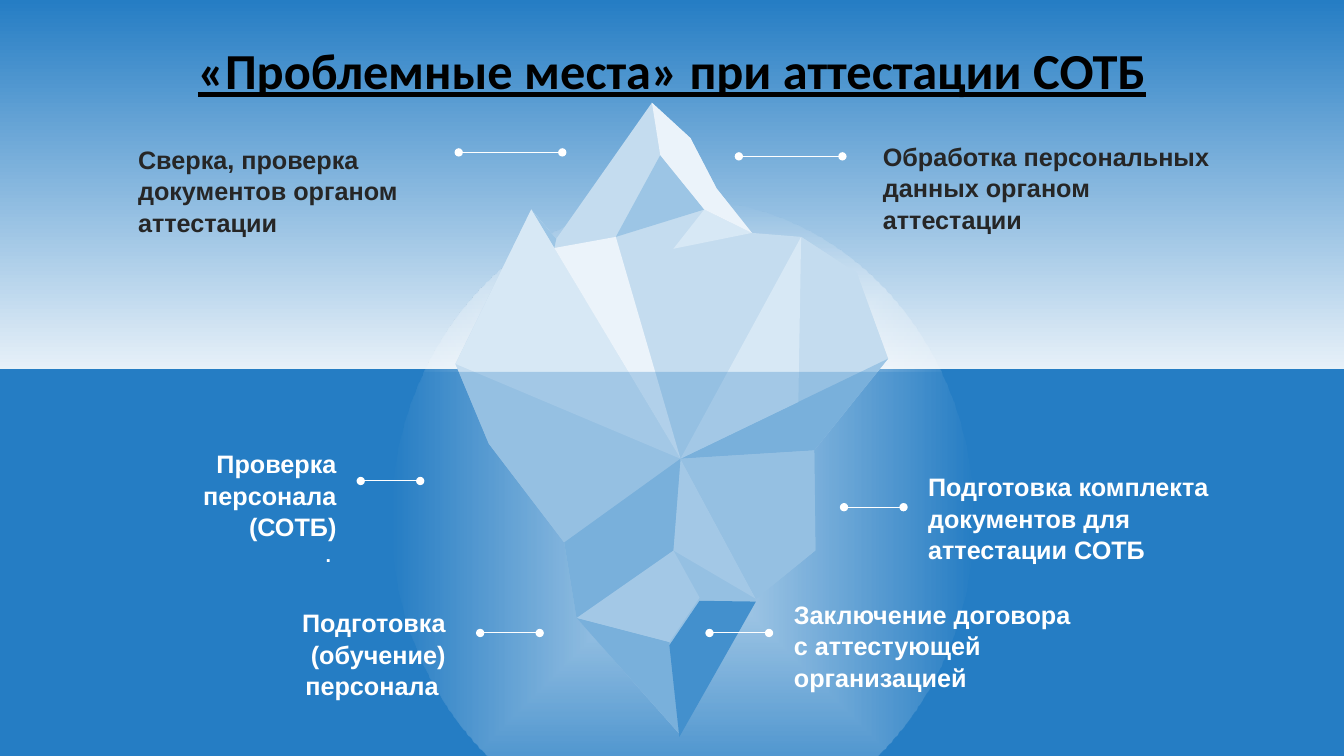
from pptx import Presentation
from pptx.dml.color import RGBColor
from pptx.enum.shapes import MSO_CONNECTOR, MSO_SHAPE
from pptx.enum.text import MSO_ANCHOR, MSO_AUTO_SIZE, PP_ALIGN
from pptx.oxml import parse_xml
from pptx.oxml.ns import nsdecls, qn
from pptx.util import Cm, Pt

BLUE, WHITE, DARK = "257DC4", "FFFFFF", "262626"
PALE, MIST, SKY, SNOW, DEEP = "C4DCEF", "D7E8F5", "9CC5E5", "EBF3FA", "5098D1"
LEFT, RIGHT = PP_ALIGN.LEFT, PP_ALIGN.RIGHT


def paint(fill, tone):
    fill.solid()
    fill.fore_color.rgb = RGBColor.from_string(tone)


def write(frame, text, size=18, tone=WHITE, font="Arial", align=LEFT, line=False, space=1.04):
    par = frame.add_paragraph() if frame.text else frame.paragraphs[0]
    par.alignment = align
    par.line_spacing = space
    run = par.add_run()
    run.text = text
    run.font.name = font
    run.font.size = Pt(size)
    run.font.bold = True
    run.font.underline = line
    paint(run.font.fill, tone)


deck = Presentation()
deck.slide_width, deck.slide_height = Cm(33.87), Cm(19.05)
slide = deck.slides.add_slide(deck.slide_layouts[5])
shapes = slide.shapes

sky = slide.background.fill
sky.gradient()
sky.gradient_angle = 270
for stop, place, tone in zip(sky.gradient_stops, (0, 0.55), (BLUE, WHITE)):
    stop.position = place
    stop.color.rgb = RGBColor.from_string(tone)

title = shapes.title
title.left, title.top, title.width, title.height = Cm(1.7), Cm(0.76), Cm(30.48), Cm(1.98)
frame = title.text_frame
frame.auto_size = MSO_AUTO_SIZE.NONE
frame.vertical_anchor = MSO_ANCHOR.MIDDLE
write(frame, "«Проблемные места» при аттестации СОТБ", size=36, tone="000000",
      font="Calibri", align=PP_ALIGN.CENTER, line=True, space=1)

sea = shapes.add_shape(MSO_SHAPE.RECTANGLE, 0, Cm(9.3), Cm(33.87), Cm(9.75))
paint(sea.fill, BLUE)

glow = shapes.add_shape(MSO_SHAPE.OVAL, Cm(9.86), Cm(5.03), Cm(14.68), Cm(16.08))
glow._element.spPr.append(parse_xml(
    f'<a:gradFill {nsdecls("a")}><a:gsLst>'
    f'<a:gs pos="0"><a:srgbClr val="{WHITE}"/></a:gs>'
    f'<a:gs pos="100000"><a:srgbClr val="{WHITE}"><a:alpha val="0"/></a:srgbClr></a:gs>'
    '</a:gsLst><a:path path="shape"><a:fillToRect l="0" t="0" r="0" b="0"/></a:path>'
    '</a:gradFill>'))

spots = {
    "A": (1643, 259), "B": (1740, 348), "C": (1806, 475), "D": (1895, 587),
    "E": (2019, 597), "F": (2159, 688), "G": (2238, 904), "H": (2052, 1135),
    "I": (2055, 1387), "J": (1905, 1509), "K": (1712, 1849), "L": (1453, 1557),
    "M": (1422, 1367), "N": (1232, 1118), "O": (1148, 917), "P": (1339, 528),
    "Q": (1402, 602), "R": (2012, 1013), "S": (1775, 528), "T": (1697, 627),
    "U": (1664, 391), "V": (1552, 597), "W": (1397, 625), "X": (1715, 1156),
    "Y": (1687, 1618), "Z": (1697, 1387), "a": (1763, 1506), "b": (1763, 1514),
    "c": (1905, 1516), "d": (1712, 1857), "e": (1687, 1626),
}
facets = [
    ("ABCDEFGHIJKLMNOPQ", PALE), ("EFGR", PALE), ("SDT", MIST), ("USV", SKY),
    ("ABCDSU", SNOW), ("PQW", SKY), ("GHX", SKY), ("OXMN", PALE), ("LYK", SKY),
    ("XJZ", MIST), ("bcde", DEEP), ("PXO", MIST), ("HIJX", PALE), ("VXW", SNOW),
    ("ERX", MIST), ("ZaYL", MIST), ("XZLM", SKY),
]
solids = [sea, glow]
berg = shapes.add_group_shape()
for keys, tone in facets:
    start, *rest = [spots[key] for key in keys]
    pen = berg.shapes.build_freeform(*start, scale=Cm(0.01))
    pen.add_line_segments(rest)
    facet = pen.convert_to_shape()
    paint(facet.fill, tone)
    solids.append(facet)

veil = shapes.add_shape(MSO_SHAPE.RECTANGLE, 0, Cm(9.37), Cm(33.87), Cm(9.75))
paint(veil.fill, BLUE)
color = veil._element.spPr.find(".//" + qn("a:srgbClr"))
color.append(parse_xml(f'<a:alpha {nsdecls("a")} val="29000"/>'))
solids.append(veil)

for solid in solids:
    solid.line.fill.background()
    solid.shadow.inherit = False

labels = [
    (3.23, 3.48, 8.86, DARK, LEFT, ["Сверка, проверка документов органом аттестации"]),
    (22, 3.4, 8.86, DARK, LEFT, ["Обработка персональных данных органом аттестации"]),
    (3.35, 11.15, 5.38, WHITE, RIGHT, ["Проверка персонала (СОТБ)", ". "]),
    (23.14, 11.73, 8.38, WHITE, LEFT, ["Подготовка комплекта документов для аттестации СОТБ"]),
    (6.1, 15.16, 5.38, WHITE, RIGHT, ["Подготовка (обучение) персонала "]),
    (19.76, 14.94, 7.77, WHITE, LEFT, ["Заключение договора с аттестующей организацией"]),
]
for left, top, width, tone, align, lines in labels:
    box = shapes.add_textbox(Cm(left), Cm(top), Cm(width), Cm(2.57))
    box.text_frame.word_wrap = True
    for text, size in zip(lines, (18, 14)):
        write(box.text_frame, text, size=size, tone=tone, align=align)

links = [
    (11.56, 3.84, 2.61), (18.62, 3.94, 2.61), (9.09, 12.12, 1.5),
    (21.27, 12.78, 1.5), (12.1, 15.95, 1.5), (17.88, 15.95, 1.5),
]
for left, top, width in links:
    link = shapes.add_connector(
        MSO_CONNECTOR.STRAIGHT, Cm(left + width), Cm(top), Cm(left), Cm(top))
    paint(link.line.fill, WHITE)
    link.line.width = Pt(0.75)
    edge = link.line._get_or_add_ln()
    for end in ("headEnd", "tailEnd"):
        edge.append(parse_xml(f'<a:{end} {nsdecls("a")} type="oval"/>'))
    link._element.spPr.append(parse_xml(f'<a:effectLst {nsdecls("a")}/>'))

deck.save("out.pptx")
